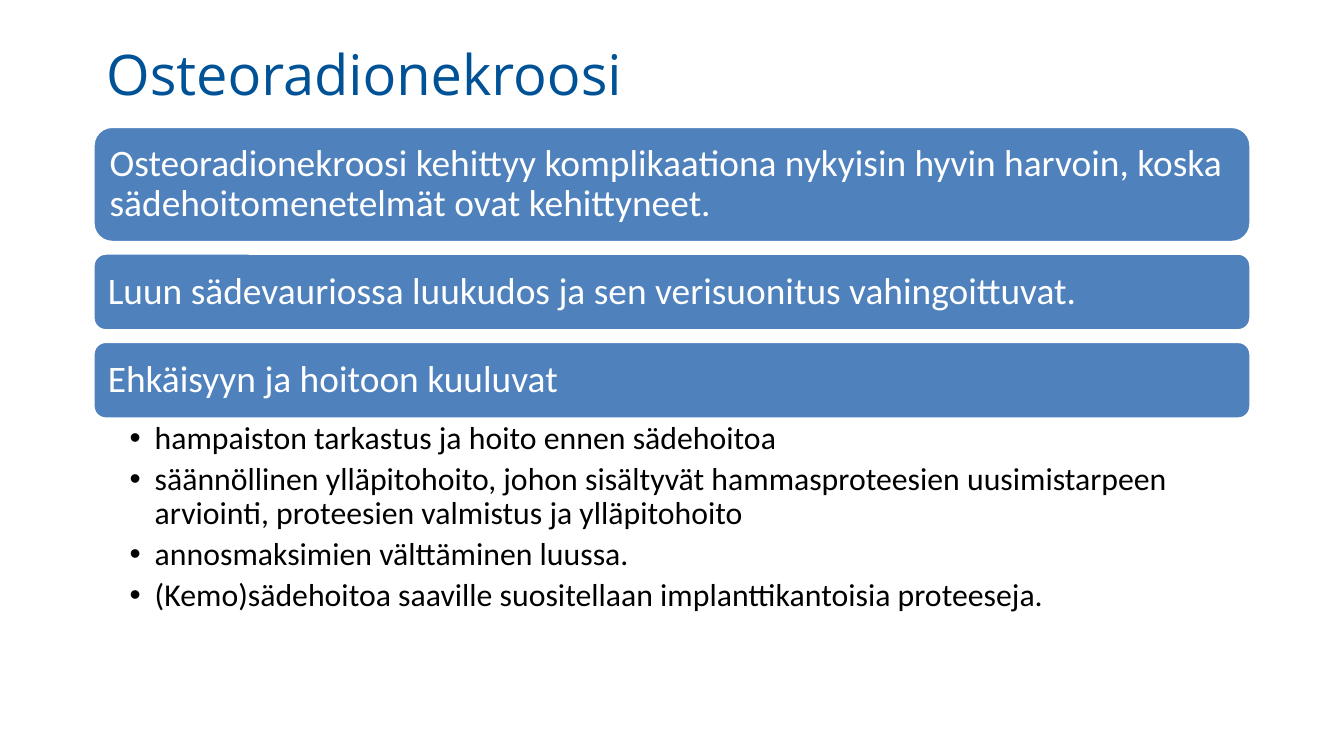
import pptx
import pptx.dml.color
import pptx.enum.shapes
import pptx.enum.text
import pptx.util
from lxml import etree
from pptx.oxml.ns import qn

Pt = pptx.util.Pt
COLORS = {"title": "005296", "bar": "4F81BD", "light": "FFFFFF", "body": "000000"}
LEFT, WIDTH = 49.7, 620.6
BARS_TOP, BAR_GAP = 67.6, 5.5
BARS = [
    (62.4, "Osteoradionekroosi kehittyy komplikaationa nykyisin hyvin harvoin, "
           "koska sädehoitomenetelmät ovat kehittyneet."),
    (41.8, "Luun sädevauriossa luukudos ja sen verisuonitus vahingoittuvat."),
    (41.8, "Ehkäisyyn ja hoitoon kuuluvat"),
]
BULLETS = [
    "hampaiston tarkastus ja hoito ennen sädehoitoa",
    "säännöllinen ylläpitohoito, johon sisältyvät hammasproteesien "
    "uusimistarpeen arviointi, proteesien valmistus ja ylläpitohoito",
    "annosmaksimien välttäminen luussa.",
    "(Kemo)sädehoitoa saaville suositellaan implanttikantoisia proteeseja.",
]


def color(name):
    return pptx.dml.color.RGBColor.from_string(COLORS[name])


def set_frame(frame, insets, anchor):
    """Wrap the text and set insets in the order left, top, right, bottom."""
    frame.word_wrap = True
    frame.auto_size = pptx.enum.text.MSO_AUTO_SIZE.NONE
    frame.vertical_anchor = anchor
    (frame.margin_left, frame.margin_top,
     frame.margin_right, frame.margin_bottom) = map(Pt, insets)


def add_span(para, text, size, font, color_name):
    para.alignment = pptx.enum.text.PP_ALIGN.LEFT
    span = para.add_run()
    span.text = text
    span.font.size = Pt(size)
    span.font.name = font
    span.font.color.rgb = color(color_name)


def place_title(slide, left, top, width, height):
    title = slide.shapes.title
    title.left, title.top, title.width, title.height = map(Pt, (left, top, width, height))
    set_frame(title.text_frame, (7.2, 3.6, 7.2, 3.6), pptx.enum.text.MSO_ANCHOR.MIDDLE)
    add_span(title.text_frame.paragraphs[0], "Osteoradionekroosi", 30, "Open Sans", "title")


def add_bar(slide, left, top, width, height, text):
    bar = slide.shapes.add_shape(pptx.enum.shapes.MSO_SHAPE.ROUNDED_RECTANGLE,
                                 *map(Pt, (left, top, width, height)))
    bar.shadow.inherit = False
    bar.fill.solid()
    bar.fill.fore_color.rgb = color("bar")
    bar.line.color.rgb = color("light")
    bar.line.width = Pt(2)
    set_frame(bar.text_frame, (6, 6, 6, 6), pptx.enum.text.MSO_ANCHOR.MIDDLE)
    para = bar.text_frame.paragraphs[0]
    para.line_spacing = 0.9
    add_span(para, text, 20, "Calibri", "light")


def add_bars(slide, left, top, width):
    """Stack the bars and return the bottom edge of the last one."""
    for height, text in BARS:
        add_bar(slide, left, top, width, height, text)
        top += height + BAR_GAP
    return top - BAR_GAP


def add_bullets(slide, left, top, width, height):
    box = slide.shapes.add_textbox(*map(Pt, (left, top, width, height)))
    frame = box.text_frame
    set_frame(frame, (19.7, 1.8, 12.2, 1.8), pptx.enum.text.MSO_ANCHOR.TOP)
    for index, text in enumerate(BULLETS):
        para = frame.add_paragraph() if index else frame.paragraphs[0]
        para.level = 1
        para.line_spacing = 0.9
        para.space_after = Pt(3.4)
        properties = para._p.get_or_add_pPr()
        properties.set("marL", str(Pt(13.5)))
        properties.set("indent", str(-Pt(13.5)))
        etree.SubElement(properties, qn("a:buFont"), typeface="Arial")
        etree.SubElement(properties, qn("a:buChar"), char="•")
        add_span(para, text, 17, "Calibri", "body")


def main():
    deck = pptx.Presentation()
    deck.slide_width, deck.slide_height = Pt(720), Pt(405)
    slide = deck.slides.add_slide(deck.slide_layouts.get_by_name("Title Only"))
    place_title(slide, LEFT, 17.3, WIDTH, 44)
    bars_bottom = add_bars(slide, LEFT, BARS_TOP, WIDTH)
    add_bullets(slide, LEFT, bars_bottom, WIDTH, 111)
    deck.save("out.pptx")


if __name__ == "__main__":
    main()
